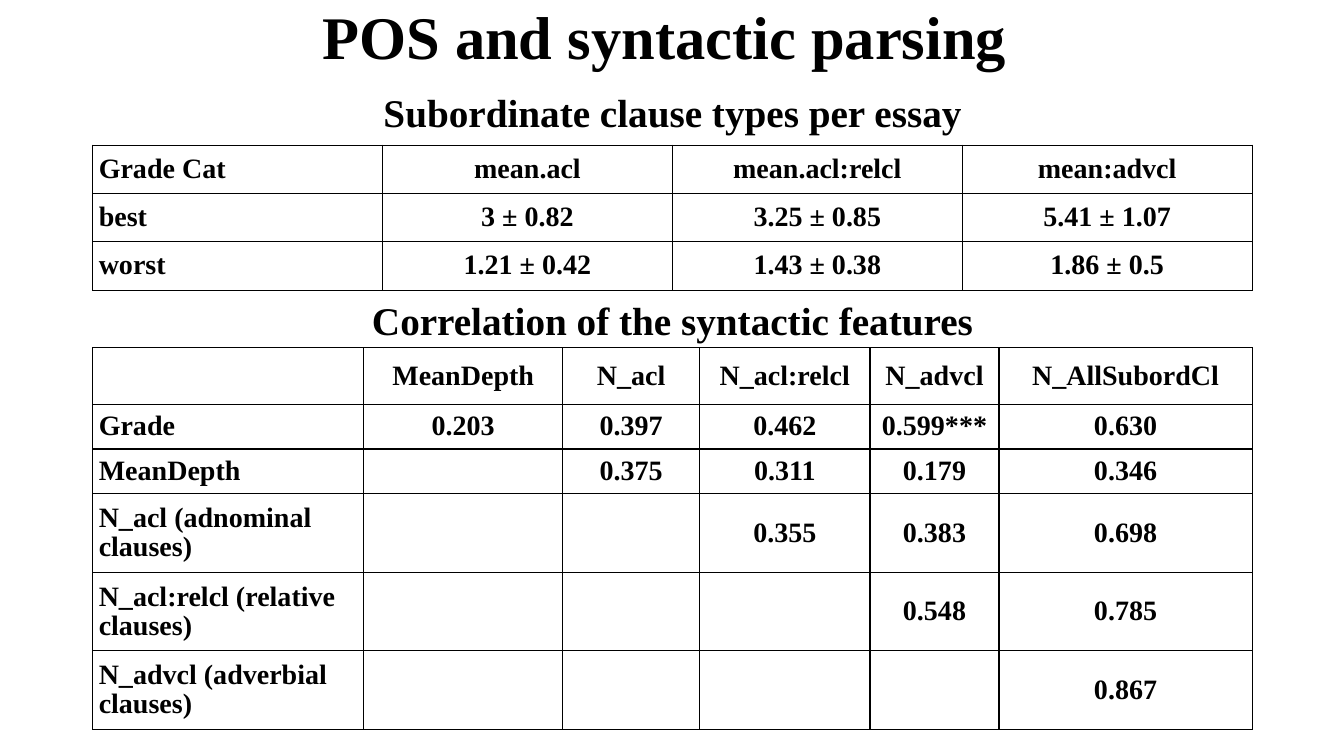
from dataclasses import dataclass

from lxml import etree
from pptx import Presentation
from pptx.dml.color import RGBColor
from pptx.enum.text import MSO_ANCHOR, MSO_AUTO_SIZE, PP_ALIGN
from pptx.oxml.ns import qn
from pptx.slide import Slide
from pptx.util import Inches, Length, Pt

LEFT, CENTER = PP_ALIGN.LEFT, PP_ALIGN.CENTER
TOP, MIDDLE = MSO_ANCHOR.TOP, MSO_ANCHOR.MIDDLE
NO_AUTOFIT = MSO_AUTO_SIZE.NONE
TITLE_ONLY = 5
SLIDE_W, SLIDE_H = Inches(13.33), Inches(7.5)


@dataclass(frozen=True)
class Theme:
    font: str = "Times New Roman"
    ink: str = "000000"
    title: float = 43.2
    heading: float = 28
    body: float = 20
    border: float = 0.91
    inset: float = 0.06


@dataclass(frozen=True)
class Section:
    """A heading and its table; tops and row heights are percent of the slide height."""
    heading: str
    heading_top: float
    table_top: float
    inset_top: float
    col_weights: list[float]
    row_heights: list[float]
    rows: list[list[str]]


THEME = Theme()

# Percent of the slide
BODY_LEFT, BODY_WIDTH = 6.9, 86.27
TITLE_HEIGHT, HEADING_HEIGHT = 10.53, 7.6

SECTIONS = [
    Section(
        "Subordinate clause types per essay", 11.07, 19.2, 0.06,
        [1] * 4, [6.4] * 3,
        [
            ["Grade Cat", "mean.acl", "mean.acl:relcl", "mean:advcl"],
            ["best", "3 ± 0.82", "3.25 ± 0.85", "5.41 ± 1.07"],
            ["worst", "1.21 ± 0.42", "1.43 ± 0.38", "1.86 ± 0.5"],
        ],
    ),
    Section(
        "Correlation of the syntactic features", 38.53, 46, 0.07,
        [2.69, 1.97, 1.36, 1.69, 1.28, 2.51], [7.5] + [5.9] * 2 + [10.4] * 3,
        [
            ["", "MeanDepth", "N_acl", "N_acl:relcl", "N_advcl", "N_AllSubordCl"],
            ["Grade", "0.203", "0.397", "0.462", "0.599***", "0.630"],
            ["MeanDepth", "", "0.375", "0.311", "0.179", "0.346"],
            ["N_acl (adnominal clauses)", "", "", "0.355", "0.383", "0.698"],
            ["N_acl:relcl (relative clauses)", "", "", "", "0.548", "0.785"],
            ["N_advcl (adverbial clauses)", "", "", "", "", "0.867"],
        ],
    ),
]


def across(percent: float) -> Length:
    return Length(round(SLIDE_W * percent / 100))


def down(percent: float) -> Length:
    return Length(round(SLIDE_H * percent / 100))


def write(tf, text: str, size: float, align: PP_ALIGN, spacing: float = 1.0) -> None:
    p = tf.paragraphs[0]
    p.text = text
    p.alignment = align
    p.line_spacing = spacing
    p.font.name = THEME.font
    p.font.size = Pt(size)
    p.font.bold = True
    p.font.color.rgb = RGBColor.from_string(THEME.ink)


def set_borders(cell) -> None:
    tc_pr = cell._tc.get_or_add_tcPr()
    for side in ("lnL", "lnR", "lnT", "lnB"):
        ln = etree.SubElement(tc_pr, qn(f"a:{side}"), w=str(Pt(THEME.border)))
        fill = etree.SubElement(ln, qn("a:solidFill"))
        etree.SubElement(fill, qn("a:srgbClr"), val=THEME.ink)


def add_title(slide: Slide, text: str) -> None:
    sp = slide.shapes.title
    sp.left, sp.top, sp.width, sp.height = 0, 0, SLIDE_W, down(TITLE_HEIGHT)
    tf = sp.text_frame
    tf.auto_size = NO_AUTOFIT
    tf.vertical_anchor = MIDDLE
    write(tf, text, THEME.title, CENTER, 0.9)


def add_heading(slide: Slide, section: Section) -> None:
    sp = slide.shapes.add_textbox(across(BODY_LEFT), down(section.heading_top),
                                  across(BODY_WIDTH), down(HEADING_HEIGHT))
    tf = sp.text_frame
    tf.word_wrap = True
    tf.vertical_anchor = TOP
    write(tf, section.heading, THEME.heading, CENTER)


def add_grid(slide: Slide, section: Section) -> None:
    frame = slide.shapes.add_table(
        len(section.rows), len(section.col_weights),
        across(BODY_LEFT), down(section.table_top),
        across(BODY_WIDTH), down(sum(section.row_heights)))
    table = frame.table
    table.first_row = table.horz_banding = False
    total = sum(section.col_weights)
    for column, weight in zip(table.columns, section.col_weights):
        column.width = across(BODY_WIDTH * weight / total)
    for row, height, texts in zip(table.rows, section.row_heights, section.rows):
        row.height = down(height)
        for i, (cell, text) in enumerate(zip(row.cells, texts)):
            cell.margin_left = cell.margin_right = cell.margin_bottom = Inches(THEME.inset)
            cell.margin_top = Inches(section.inset_top)
            cell.vertical_anchor = MIDDLE
            set_borders(cell)
            cell.fill.background()
            if text:
                write(cell.text_frame, text, THEME.body, CENTER if i else LEFT, 0.93)


def main() -> None:
    prs = Presentation()
    prs.slide_width, prs.slide_height = SLIDE_W, SLIDE_H
    slide = prs.slides.add_slide(prs.slide_layouts[TITLE_ONLY])

    # Title
    add_title(slide, "POS and syntactic parsing ")

    # Headed tables
    for section in SECTIONS:
        add_heading(slide, section)
        add_grid(slide, section)

    prs.save("out.pptx")


if __name__ == "__main__":
    main()
